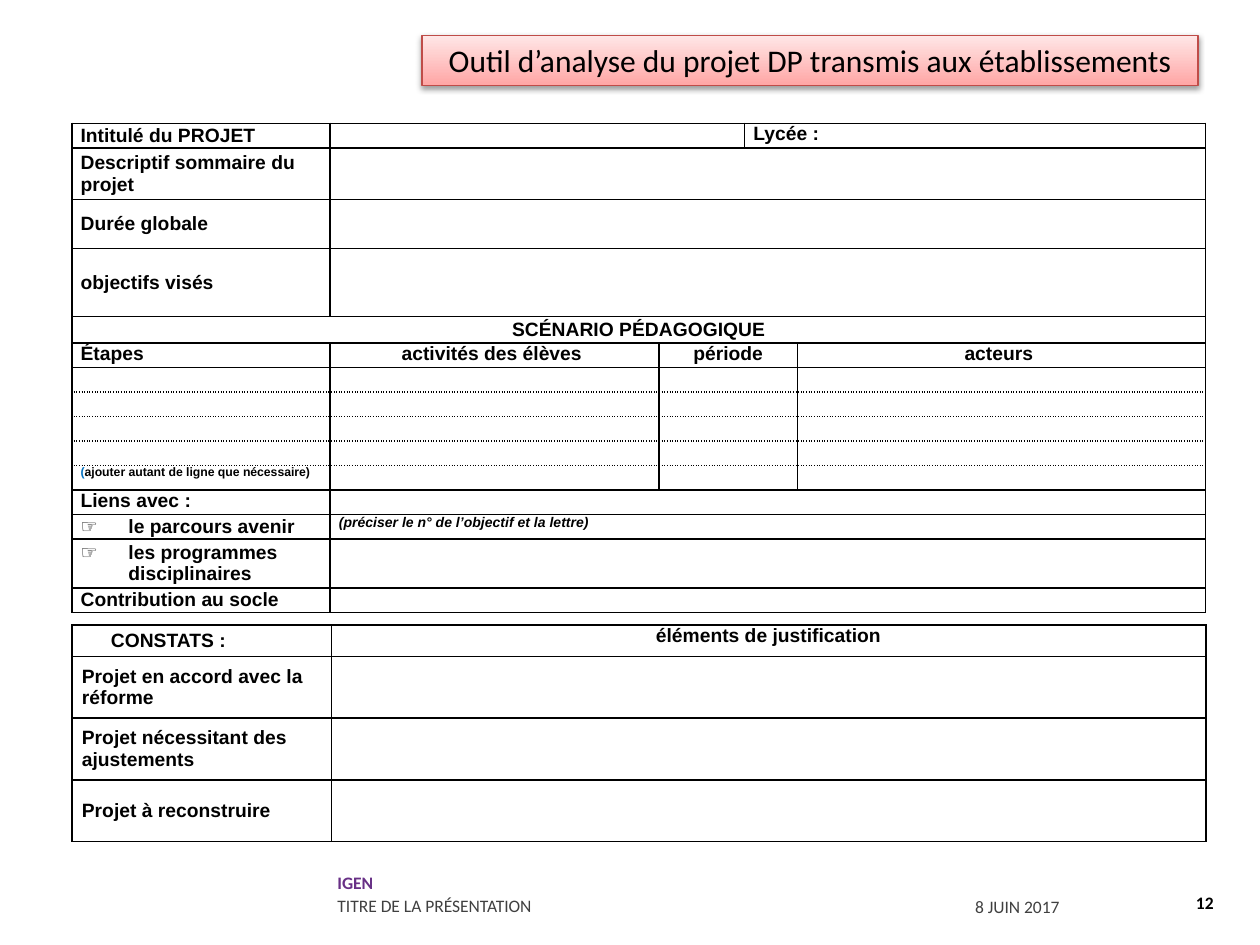
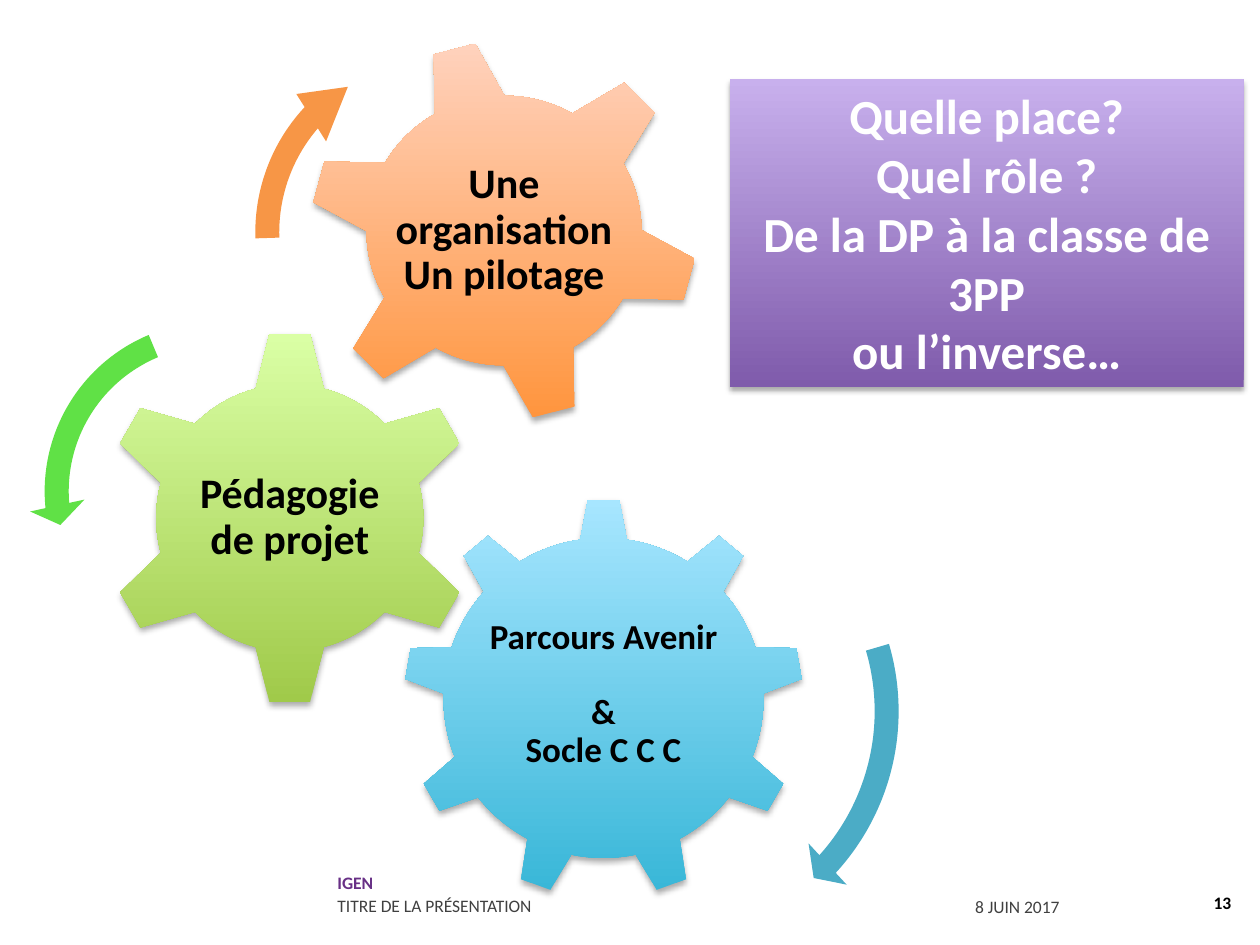
from math import cos, radians, sin, tan

from lxml import etree
from pptx import Presentation
from pptx.dml.color import RGBColor
from pptx.enum.shapes import MSO_SHAPE
from pptx.enum.text import MSO_ANCHOR, PP_ALIGN
from pptx.oxml.ns import qn
from pptx.util import Inches, Pt

RECT = MSO_SHAPE.RECTANGLE
ARC = MSO_SHAPE.CIRCULAR_ARROW
LEFT_ARC = MSO_SHAPE.LEFT_CIRCULAR_ARROW
TOP, MID = MSO_ANCHOR.TOP, MSO_ANCHOR.MIDDLE
LEFT, MIDDLE, RIGHT = PP_ALIGN.LEFT, PP_ALIGN.CENTER, PP_ALIGN.RIGHT

BLACK, WHITE, GRAY = "000000", "FFFFFF", "404040"
PURPLE, BLUE = "683086", "0070C0"
BODY, GRID = "Calibri", "Arial"
THIN = 14 / 72
LABEL = {"size": 11, "bold": True, "face": GRID}


def rgb(code):
    return RGBColor.from_string(code)


def node(base, tag, **attrs):
    item = etree.SubElement(base, qn(tag))
    for name, val in attrs.items():
        item.set(name, str(val))
    return item


def write(frame, text, size=10, color=BLACK, bold=False, ital=False, face=BODY,
          align=LEFT, lead=None, gap=0, left=0, hang=0, mark=None,
          join=False, turn=False):
    par = frame.paragraphs[-1]
    if par.runs and not join:
        par = frame.add_paragraph()
    if not join:
        par.alignment = align
        if lead:
            par.line_spacing = lead
        if gap:
            par.space_before = Pt(gap)
        props = par._p.get_or_add_pPr()
        if left:
            props.set("marL", str(Inches(left)))
            props.set("indent", str(Inches(-hang)))
        if mark:
            node(props, "a:buFont", typeface=GRID)
            node(props, "a:buChar", char=mark)
    for i, line in enumerate(text.split("\n")):
        if i or turn:
            par.add_line_break()
        run = par.add_run()
        run.text = line
        font = run.font
        font.size, font.name = Pt(size), face
        font.bold, font.italic = bold, ital
        font.color.rgb = rgb(color)


def pad(frame, wide, high, anchor):
    frame.word_wrap = True
    frame.margin_left = frame.margin_right = Inches(wide)
    frame.margin_top = frame.margin_bottom = Inches(high)
    frame.vertical_anchor = anchor


def label(slide, box, anchor=MID):
    frame = slide.shapes.add_textbox(*map(Inches, box)).text_frame
    pad(frame, 0.1, 0.05, anchor)
    return frame


def blend(shape, low, high):
    shape.fill.gradient()
    shape.fill.gradient_angle = 90
    for stop, code in zip(shape.fill.gradient_stops, (low, high)):
        stop.color.rgb = rgb(code)


def shade(shape, alpha, blur, dist):
    shape.shadow.inherit = False
    base = shape._element.spPr.find(qn("a:effectLst"))
    cast = node(base, "a:outerShdw", blurRad=Pt(blur), dist=Pt(dist),
                dir=5400000, rotWithShape=0)
    color = node(cast, "a:srgbClr", val=BLACK)
    node(color, "a:alpha", val=alpha * 1000)


def panel(slide, box, low, high, edge, alpha, dist):
    shape = slide.shapes.add_shape(RECT, *map(Inches, box))
    blend(shape, low, high)
    if edge:
        shape.line.color.rgb = rgb(edge)
        shape.line.width = Pt(0.75)
    else:
        shape.line.fill.background()
    shade(shape, alpha, 3.1, dist)
    pad(shape.text_frame, 0.1, 0.05, TOP)
    return shape.text_frame


def bend(shape, mid, root, span, wide):
    pull = 4 / 3 * tan(radians(span) / 4)
    hub = Inches(mid[0]) - shape.left, Inches(mid[1]) - shape.top
    lines = list(shape._element.iter(qn("a:lnTo")))
    for first, last in zip(lines[2::4], lines[3::4]):
        start, end = first[0], last[0]
        last.tag = qn("a:cubicBezTo")
        spots = []
        for spot, way in ((start, pull), (end, -pull)):
            x, y = int(spot.get("x")), int(spot.get("y"))
            spots.append((x - way * (y - hub[1]) * wide,
                          y + way * (x - hub[0]) / wide))
        last.remove(end)
        for x, y in spots:
            node(last, "a:pt", x=round(x), y=round(y))
        last.append(end)


def gear(slide, mid, teeth, root, tip, base, edge, low, high, inset,
         turn=0, wide=1):
    step = 360 / teeth
    spots = []
    for k in range(teeth):
        axis = k * step + turn
        spots += [(root, axis - base), (tip, axis - edge),
                  (tip, axis + edge), (root, axis + base)]
    spots.append((root, turn - base))
    points = [(Inches(mid[0] + wide * far * sin(radians(deg))),
               Inches(mid[1] - far * cos(radians(deg)))) for far, deg in spots]
    form = slide.shapes.build_freeform(*points[0])
    form.add_line_segments(points[1:], close=True)
    shape = form.convert_to_shape()
    bend(shape, mid, root, step - 2 * base, wide)
    blend(shape, low, high)
    shape.line.fill.background()
    shade(shape, 32, 3.5, 2.2)
    pad(shape.text_frame, inset, 0.5, MID)
    return shape.text_frame


def swirl(slide, kind, box, thick, tip, angles, color):
    shape = slide.shapes.add_shape(kind, *map(Inches, box))
    sizes = [thick / 100] + [deg * 0.6 for deg in angles] + [tip / 100]
    for i, val in enumerate(sizes):
        shape.adjustments[i] = val
    shape.fill.solid()
    shape.fill.fore_color.rgb = rgb(color)
    shape.line.fill.background()
    shape.shadow.inherit = False


def frame_cell(cell, dots):
    props = cell._tc.get_or_add_tcPr()
    for side in "LRTB":
        line = node(props, "a:ln" + side, w=Pt(1))
        node(node(line, "a:solidFill"), "a:srgbClr", val=BLACK)
        node(line, "a:prstDash", val="sysDot" if side in dots else "solid")
    cell.fill.background()


def grid(slide, spot, cols, rows, inset, spans=(), dots=None):
    size = (sum(cols), sum(rows))
    table = slide.shapes.add_table(len(rows), len(cols),
                                   *map(Inches, spot + size)).table
    table.first_row = table.horz_banding = False
    for col, wide in zip(table.columns, cols):
        col.width = Inches(wide)
    for row, high in zip(table.rows, rows):
        row.height = Inches(high)
    for r in range(len(rows)):
        for c in range(len(cols)):
            cell = table.cell(r, c)
            cell.margin_left = cell.margin_right = Inches(inset)
            cell.margin_top = cell.margin_bottom = 0
            frame_cell(cell, (dots or {}).get(r, ""))
            node(cell.text_frame.paragraphs[0]._p, "a:endParaRPr", sz=1100)
    for r, first, last in spans:
        table.cell(r, first).merge(table.cell(r, last))
    return table


def fill(table, r, c, text, anchor=MID, **form):
    cell = table.cell(r, c)
    cell.vertical_anchor = anchor
    write(cell.text_frame, text, **{**LABEL, **form})


def footer(slide, page, left):
    write(label(slide, (left, 6.99, 0.82, 0.34)), page, bold=True, align=RIGHT)
    write(label(slide, (7.64, 6.99, 1.27, 0.4)), "8 JUIN 2017",
          color=GRAY, lead=Pt(13.2))
    frame = label(slide, (2.58, 6.72, 3.41, 0.74))
    write(frame, "IGEN", color=PURPLE, bold=True, lead=Pt(13.2))
    write(frame, "TITRE DE LA PRÉSENTATION", color=GRAY, join=True, turn=True)


def plan(slide):
    rows = [THIN, 0.41, 0.39, 0.54, 0.21] + [THIN] * 8 + [0.39, THIN]
    spans = [(0, 1, 2), (0, 3, 4), (4, 0, 4)]
    spans += [(r, 1, 4) for r in (1, 2, 3, 11, 12, 13, 14)]
    spans += [(r, 2, 3) for r in range(5, 11)]
    dots = {6: "B", 7: "TB", 8: "TB", 9: "TB", 10: "T"}
    table = grid(slide, (0.57, 0.98), [2.05, 2.61, 0.68, 0.42, 3.24], rows,
                 0.07, spans, dots)
    heads = {0: "Intitulé du PROJET", 1: "Descriptif sommaire du projet",
             2: "Durée globale", 3: "objectifs visés",
             14: "Contribution au socle "}
    for r, text in heads.items():
        fill(table, r, 0, text)
    fill(table, 0, 3, "Lycée :", TOP)
    fill(table, 4, 0, "SCÉNARIO PÉDAGOGIQUE", align=MIDDLE)
    fill(table, 5, 0, "Étapes", TOP)
    for c, text in ((1, "activités des élèves "), (2, "période"), (4, "acteurs ")):
        fill(table, 5, c, text, TOP, align=MIDDLE)
    fill(table, 10, 0, "(", TOP, size=7, color=BLUE)
    fill(table, 10, 0, "ajouter autant de ligne que nécessaire)", TOP,
         size=7, join=True)
    fill(table, 11, 0, "Liens avec :", TOP)
    for r, text in ((12, "le parcours avenir "),
                    (13, "les programmes disciplinaires ")):
        fill(table, r, 0, text, left=0.38, hang=0.38, mark="☞")
    fill(table, 12, 1, "(préciser le n° de l’objectif et la lettre)", TOP,
         size=8, ital=True)


def review(slide):
    table = grid(slide, (0.57, 4.96), [2.06, 6.94], [0.25] + [0.49] * 3, 0.06)
    fill(table, 0, 0, "CONSTATS :", left=0.25)
    fill(table, 0, 1, "éléments de justification", TOP, align=MIDDLE)
    facts = ("Projet en accord avec la réforme",
             "Projet nécessitant des ajustements", "Projet à reconstruire")
    for r, text in enumerate(facts, 1):
        fill(table, r, 0, text, left=0.02)


def gears(slide):
    form = {"bold": True, "align": MIDDLE, "lead": 0.9}
    goal = gear(slide, (4.79, 5.54), 9, 1.27, 1.58, 8.4, 4.5,
                "39B7D8", "A7E6FF", 0.6)
    write(goal, "Parcours Avenir", size=20, **form)
    write(goal, "&\nSocle C C C", size=20, gap=21.6, **form)
    teach = gear(slide, (2.3, 4.11), 6, 1.06, 1.47, 14.8, 6.3,
                 "A0CA4A", "DAFFA5", 0.54)
    write(teach, "Pédagogie de projet", size=24, **form)
    lead = gear(slide, (4, 1.83), 6, 1.07, 1.5, 15.2, 6.4,
                "FF953E", "FFD2BD", 0.4, -15, 1.02)
    write(lead, "Une organisation\nUn pilotage", size=24, **form)
    swirl(slide, ARC, (3.21, 3.62, 4.05, 4.05), 4.7, 5.5,
          (4.98, 42.28, 343.63), "4BACC6")
    swirl(slide, LEFT_ARC, (0.23, 2.43, 2.94, 2.94), 6.5, 7.5,
          (7.17, 174.82, 247.3), "60E146")
    swirl(slide, ARC, (1.9, 0.26, 3.17, 3.17), 6, 7,
          (16.03, 221.9, 178.13), "F79646")


def main():
    deck = Presentation()
    deck.slide_width, deck.slide_height = Inches(10), Inches(7.5)
    blank = deck.slide_layouts[6]

    slide = deck.slides.add_slide(blank)
    footer(slide, "12", 8.91)
    plan(slide)
    title = panel(slide, (3.35, 0.28, 6.16, 0.4), "FFA6A5", "FFE7E7",
                  "BF4C48", 38, 1.6)
    write(title, "Outil d’analyse du projet DP transmis aux établissements",
          size=18, align=MIDDLE)
    review(slide)

    slide = deck.slides.add_slide(blank)
    gears(slide)
    ask = panel(slide, (5.79, 0.63, 4.08, 2.44), "7F5BAB", "C8B0ED",
                None, 35, 1.8)
    write(ask, "Quelle place?\nQuel rôle ?\nDe la DP à la classe de 3PP\n"
          "ou l’inverse…", size=28, color=WHITE, bold=True, align=MIDDLE)
    footer(slide, "13", 9.05)
    deck.save("out.pptx")


if __name__ == "__main__":
    main()
